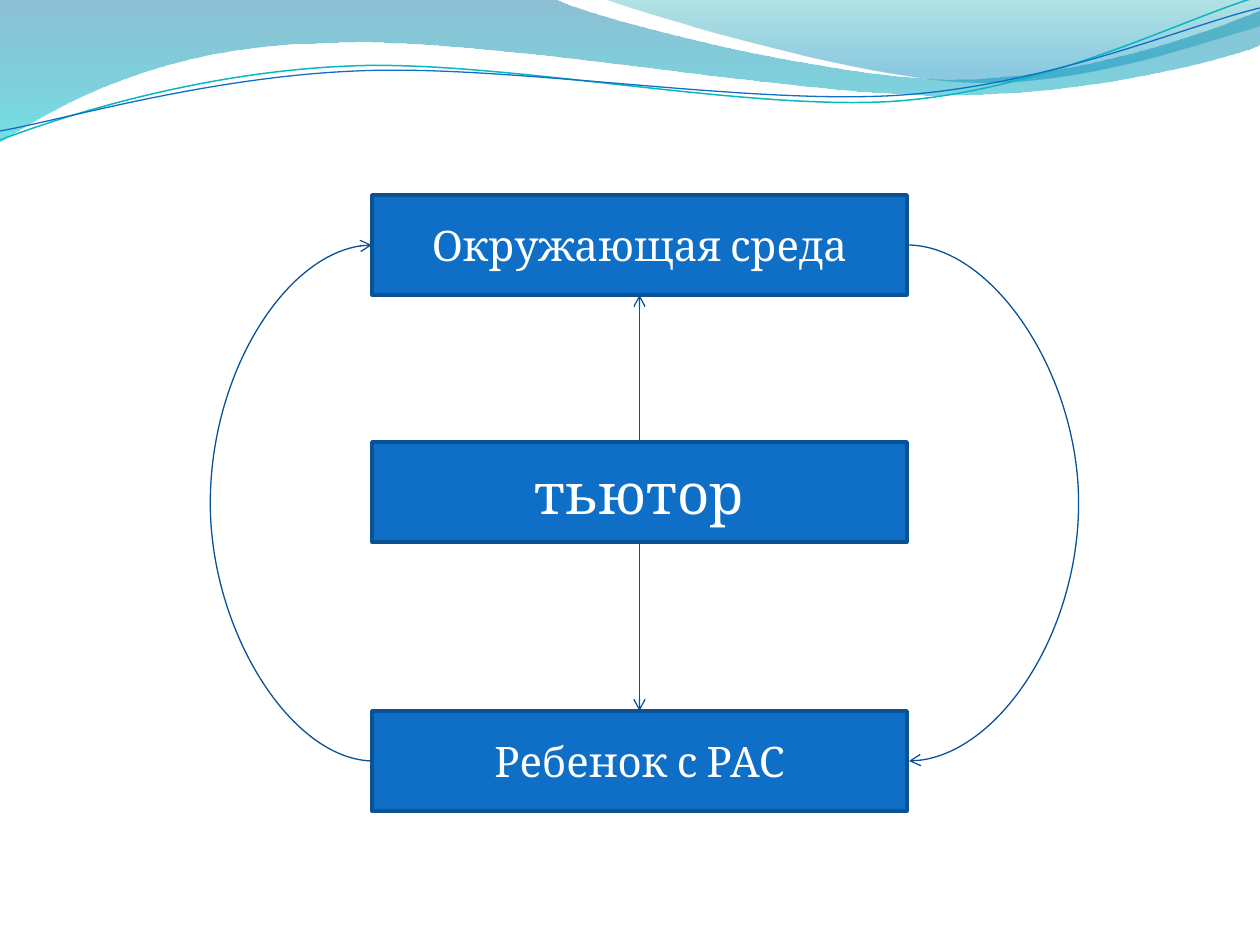
from lxml.etree import SubElement
from pptx import Presentation
from pptx.dml.color import RGBColor
from pptx.enum.shapes import MSO_CONNECTOR, MSO_SHAPE
from pptx.enum.text import MSO_ANCHOR, PP_ALIGN
from pptx.oxml.ns import qn
from pptx.util import Pt

EMU_PER_PX = 914400 / 126
COLORS = {
    "box": "0F6FC6", "border": "0B5292", "arrow": "095295", "text": "FFFFFF",
    "deep": "0074A1", "aqua": "00C6CF", "teal": "00A1A9", "sky": "008BBF",
    "teal_line": "0AB8BF", "blue_line": "0F6FC6",
}
TOP, LEFT, BOTTOM, RIGHT = range(4)  # connection sites of a rectangle

# Each step is one point for a straight edge or three points for a Bezier curve.
WIDE_WAVE = [
    [(0, 0)], [(554, -1)],
    [(600, 21), (837, 79), (955, 79)], [(1075, 79), (1207, 33), (1260, 11)],
    [(1261, 45)],
    [(1239, 55), (1096, 96), (940, 95)], [(784, 95), (481, 35), (324, 43)],
    [(163, 45), (58, 105), (-1, 142)],
]
RIGHT_WAVE = [
    [(604, -1)],
    [(642, 14), (859, 78), (969, 82)], [(1079, 87), (1211, 40), (1260, 26)],
    [(1260, 0)],
]
TEAL_CURVE = [
    [(0, 140)],
    [(60, 117), (199, 72), (349, 66)], [(498, 59), (747, 112), (898, 101)],
    [(1050, 89), (1182, 19), (1257, -3)],
]
BLUE_CURVE = [
    [(0, 131)],
    [(59, 121), (207, 77), (357, 71)], [(508, 64), (752, 106), (903, 95)],
    [(1053, 84), (1185, 26), (1260, 8)],
]


def px(length):
    return round(length * EMU_PER_PX)


def rgb(name):
    return RGBColor.from_string(COLORS[name])


def set_line(shape, color, points):
    shape.line.color.rgb = rgb(color)
    shape.line.width = Pt(points)


def add_outline(page, steps, close):
    """Draw a polygon through all points, then turn its triples into curves."""
    builder = page.shapes.build_freeform(*steps[0][0], scale=EMU_PER_PX)
    builder.add_line_segments([point for step in steps[1:] for point in step], close=close)
    shape = builder.convert_to_shape()
    shape.shadow.inherit = False
    edges = iter(list(shape.element.iter(qn("a:lnTo"))))
    for step in steps[1:]:
        group = [next(edges) for point in step]
        if len(group) == 3:
            curve = group[0].makeelement(qn("a:cubicBezTo"))
            group[0].addprevious(curve)
            for edge in group:
                curve.append(edge[0])
                edge.getparent().remove(edge)
    return shape


def add_wave(page, steps, stops):
    """Stops are (position, colour, opacity in percent), from top to bottom."""
    wave = add_outline(page, steps, close=True)
    wave.line.fill.background()
    wave.fill.gradient()
    wave.fill.gradient_angle = 270
    for stop, (position, color, opacity) in zip(wave.fill.gradient_stops, stops):
        stop.position = position
        stop.color.rgb = rgb(color)
    for tag, (_, _, opacity) in zip(wave.element.iter(qn("a:gs")), stops):
        SubElement(tag[0], qn("a:alpha"), val=str(opacity * 1000))


def add_curve(page, steps, color, points):
    curve = add_outline(page, steps, close=False)
    curve.fill.background()
    set_line(curve, color, points)


def add_box(page, text, top, size):
    box = page.shapes.add_shape(MSO_SHAPE.RECTANGLE, px(372), px(top), px(535), px(100))
    box.shadow.inherit = False
    box.fill.solid()
    box.fill.fore_color.rgb = rgb("box")
    set_line(box, "border", 2)
    frame = box.text_frame
    frame.vertical_anchor = MSO_ANCHOR.MIDDLE
    paragraph = frame.paragraphs[0]
    paragraph.text = text
    paragraph.alignment = PP_ALIGN.CENTER
    paragraph.font.name = "Cambria"
    paragraph.font.size = Pt(size)
    paragraph.font.color.rgb = rgb("text")
    return box


def add_arrow(page, start, start_site, end, end_site, kind=MSO_CONNECTOR.STRAIGHT):
    arrow = page.shapes.add_connector(kind, 0, 0, 0, 0)
    arrow.begin_connect(start, start_site)
    arrow.end_connect(end, end_site)
    set_line(arrow, "arrow", 0.75)
    SubElement(arrow.line._get_or_add_ln(), qn("a:tailEnd"), type="arrow")
    SubElement(arrow.element.spPr, qn("a:effectLst"))
    return arrow


def add_arc(page, start, end, site, bend):
    """Join the same side of two boxes with an arc that reaches out by bend."""
    arc = add_arrow(page, start, site, end, site, MSO_CONNECTOR.CURVE)
    upper, lower = sorted((start, end), key=lambda box: box.top)
    width = 2
    arc.left = upper.left + (upper.width if site == RIGHT else 0)
    arc.top = upper.top + upper.height // 2
    arc.width, arc.height = px(width), lower.top - upper.top
    properties = arc.element.spPr
    frame = properties.find(qn("a:xfrm"))
    for flip in ("flipH", "flipV"):
        frame.attrib.pop(flip, None)
    if site == LEFT:
        frame.set("rot", "10800000")
    guides = properties.find(qn("a:prstGeom")).find(qn("a:avLst"))
    SubElement(guides, qn("a:gd"), name="adj1", fmla=f"val {bend * 100000 // width}")


def main():
    deck = Presentation()
    deck.slide_width, deck.slide_height = px(1260), px(945)
    page = deck.slides.add_slide(deck.slide_layouts[6])

    add_wave(page, WIDE_WAVE, [(0, "deep", 45), (1, "aqua", 55)])
    add_wave(page, RIGHT_WAVE, [(0, "teal", 30), (0.8, "sky", 45)])
    add_curve(page, TEAL_CURVE, "teal_line", 0.85)
    add_curve(page, BLUE_CURVE, "blue_line", 0.75)

    surroundings = add_box(page, "Окружающая среда", 195, 24)
    child = add_box(page, "Ребенок с РАС", 711, 24)
    tutor = add_box(page, "тьютор", 442, 32)

    add_arrow(page, tutor, TOP, surroundings, BOTTOM)
    add_arrow(page, tutor, BOTTOM, child, TOP)
    add_arc(page, surroundings, child, RIGHT, 173)
    add_arc(page, child, surroundings, LEFT, 165)

    deck.save("out.pptx")


if __name__ == "__main__":
    main()
